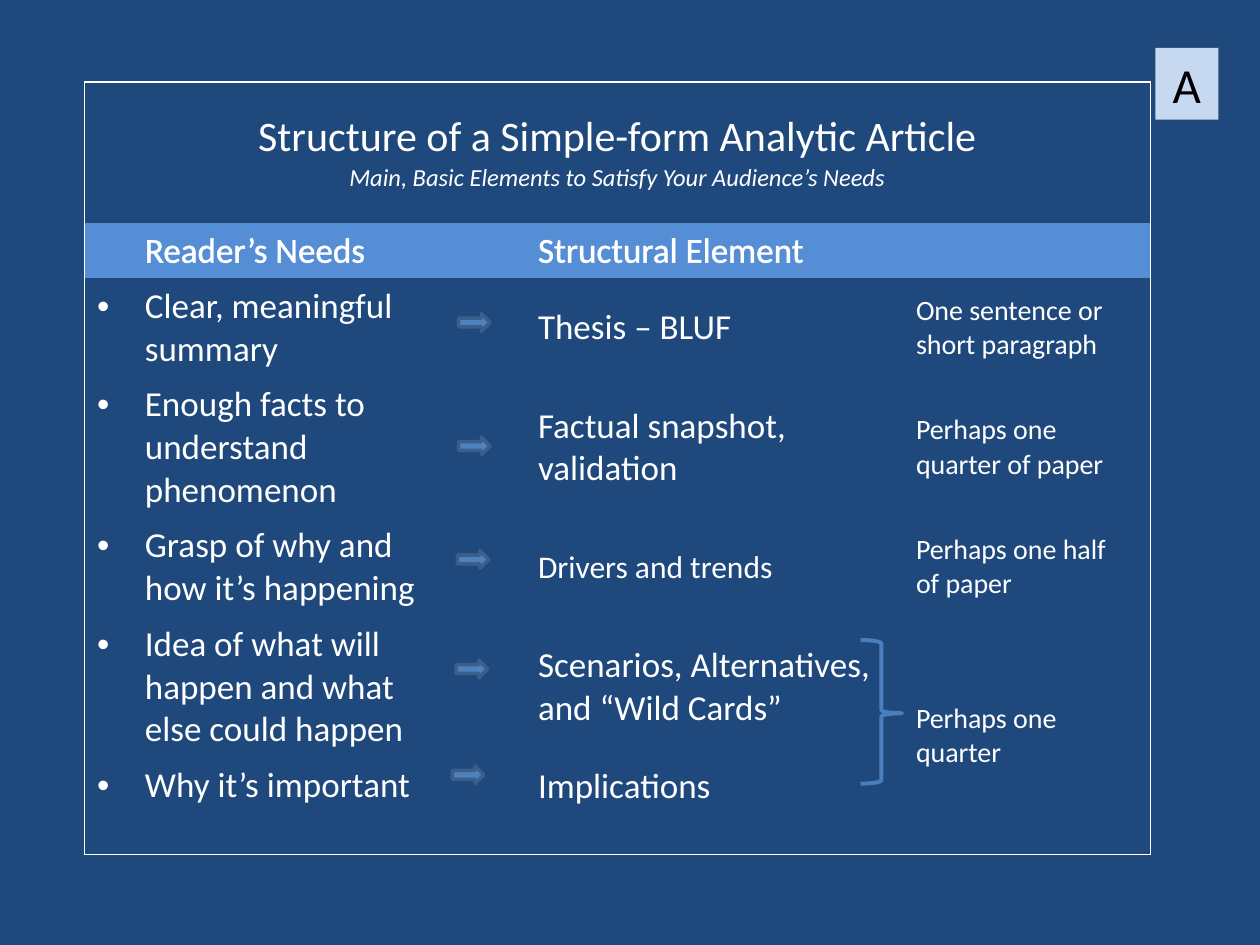
from lxml.etree import SubElement
from pptx import Presentation
from pptx.dml.color import RGBColor
from pptx.enum.shapes import MSO_SHAPE
from pptx.enum.text import MSO_ANCHOR, MSO_AUTO_SIZE, PP_ALIGN
from pptx.oxml import parse_xml
from pptx.oxml.ns import nsdecls, qn
from pptx.util import Inches, Pt

TITLE = "Structure of a Simple-form Analytic Article"
SUBTITLE = "Main, Basic Elements to Satisfy Your Audience’s Needs"
HEADINGS = {0: "Reader’s Needs", 2: "Structural Element"}
NEEDS = [
    ("Clear, meaningful summary", "Thesis – BLUF", 20, "One sentence or short paragraph"),
    ("Enough facts to understand phenomenon", "Factual snapshot, validation", 20,
     "Perhaps one quarter of paper"),
    ("Grasp of why and how it’s happening", "Drivers and trends", 18,
     "Perhaps one half\vof paper"),
    ("Idea of what will happen and what else could happen",
     "Scenarios, Alternatives, and “Wild Cards”", 20, "Perhaps one quarter"),
    ("Why it’s important", "Implications\v", 20, None),
]
ARROWS = [(3.64, 2.49), (3.64, 3.47), (3.63, 4.37), (3.62, 5.24), (3.59, 6.08)]
COLUMNS = [2.75, 0.75, 3, 1.96]
ROWS = [1.12, 0.44, 0.77, 1.1, 0.77, 1.1, 0.77]
INDENT = Inches(0.38)
THEME = {
    "font": "Calibri", "page": "1F497D", "text": "FFFFFF", "band": "558ED5",
    "arrow": "4F81BD", "arrow_line": "3A5F8C", "brace": "4B7EBC",
    "badge": "C6D9F1", "badge_text": "000000",
    "title": 24, "subtitle": 14, "body": 20, "note": 16, "letter": 28,
}
NO_STYLE = "{2D5ABB26-0587-4C30-8999-92F81FD0307C}"


def color(name):
    return RGBColor.from_string(THEME[name])


def write(para, text, size, ink="text", **formats):
    para.text = text
    formats = {"name": THEME["font"], "size": Pt(size), **formats}
    for span in para.runs:
        for key, value in formats.items():
            setattr(span.font, key, value)
        span.font.color.rgb = color(ink)


def indent(para, bullet):
    properties = para._p.get_or_add_pPr()
    properties.set("marL", str(INDENT))
    if bullet:
        properties.set("indent", str(-INDENT))
        SubElement(properties, qn("a:buFont"), typeface="Arial")
        SubElement(properties, qn("a:buChar"), char="•")


def outline(para):
    for span in para.runs:
        span.font._element.insert(0, parse_xml(
            f'<a:ln {nsdecls("a")} w="{Pt(0.75)}"><a:solidFill>'
            f'<a:srgbClr val="{THEME["text"]}"/></a:solidFill></a:ln>'))


def border(cell, sides):
    for place, side in enumerate(sides):
        cell._tc.get_or_add_tcPr().insert(place, parse_xml(
            f'<a:ln{side} {nsdecls("a")} w="{Pt(1)}"><a:solidFill>'
            f'<a:srgbClr val="{THEME["text"]}"/></a:solidFill></a:ln{side}>'))


def add_figure(page, kind, place, line, width, fill=None):
    shape = page.shapes.add_shape(kind, *map(Inches, place))
    shape.shadow.inherit = False
    shape.line.color.rgb = color(line)
    shape.line.width = Pt(width)
    if fill:
        shape.fill.solid()
        shape.fill.fore_color.rgb = color(fill)
    else:
        shape.fill.background()
    return shape


def style_cells(table):
    last_row, last_column = len(ROWS), len(COLUMNS)
    for row in range(last_row):
        for column in range(last_column):
            cell = table.cell(row, column)
            cell.vertical_anchor = MSO_ANCHOR.MIDDLE
            if row == 1:
                cell.fill.solid()
                cell.fill.fore_color.rgb = color("band")
            else:
                cell.fill.background()
            height, width = (cell.span_height, cell.span_width) if cell.is_merge_origin else (1, 1)
            edges = {"L": column == 0, "R": column + width == last_column,
                     "T": row == 0, "B": row + height == last_row}
            border(cell, [side for side, outer in edges.items() if outer])


def add_structure_table(page):
    frame = page.shapes.add_table(len(ROWS), len(COLUMNS), Inches(0.67), Inches(0.65),
                                  Inches(sum(COLUMNS)), Inches(sum(ROWS)))
    table = frame.table
    table.first_row = table.horz_banding = False
    table._tbl.tblPr.find(qn("a:tableStyleId")).text = NO_STYLE
    for column, width in zip(table.columns, COLUMNS):
        column.width = Inches(width)
    for row, height in zip(table.rows, ROWS):
        row.height = Inches(height)
    table.cell(0, 0).merge(table.cell(0, 3))
    table.cell(5, 3).merge(table.cell(6, 3))
    style_cells(table)
    table.cell(6, 0).vertical_anchor = MSO_ANCHOR.TOP

    heading = table.cell(0, 0).text_frame
    write(heading.paragraphs[0], TITLE, THEME["title"])
    write(heading.add_paragraph(), SUBTITLE, THEME["subtitle"], italic=True)
    for para in heading.paragraphs:
        para.alignment = PP_ALIGN.CENTER
    for column, text in HEADINGS.items():
        para = table.cell(1, column).text_frame.paragraphs[0]
        write(para, text, THEME["body"])
        outline(para)
        if column == 0:
            indent(para, bullet=False)
    for row, (need, element, size, note) in enumerate(NEEDS, 2):
        entries = [(0, need, THEME["body"]), (2, element, size), (3, note, THEME["note"])]
        for column, text, points in entries:
            if text:
                para = table.cell(row, column).text_frame.paragraphs[0]
                write(para, text, points)
                if column == 0:
                    indent(para, bullet=True)


def add_badge(page):
    box = page.shapes.add_textbox(*map(Inches, (9.17, 0.38, 0.5, 0.57)))
    box.fill.solid()
    box.fill.fore_color.rgb = color("badge")
    box.text_frame.word_wrap = True
    box.text_frame.auto_size = MSO_AUTO_SIZE.SHAPE_TO_FIT_TEXT
    para = box.text_frame.paragraphs[0]
    write(para, "A", THEME["letter"], "badge_text")
    para.alignment = PP_ALIGN.CENTER


def main():
    deck = Presentation()
    deck.slide_width, deck.slide_height = Inches(10), Inches(7.5)
    page = deck.slides.add_slide(deck.slide_layouts[6])
    page.background.fill.solid()
    page.background.fill.fore_color.rgb = color("page")
    add_structure_table(page)
    for left, top in ARROWS:
        add_figure(page, MSO_SHAPE.RIGHT_ARROW, (left, top, 0.25, 0.14),
                   "arrow_line", 2, "arrow")
    brace = add_figure(page, MSO_SHAPE.RIGHT_BRACE, (6.83, 5.08, 0.33, 1.14), "brace", 2.25)
    brace.adjustments[0], brace.adjustments[1] = 0.08, 0.51
    add_badge(page)
    deck.save("out.pptx")


if __name__ == "__main__":
    main()
